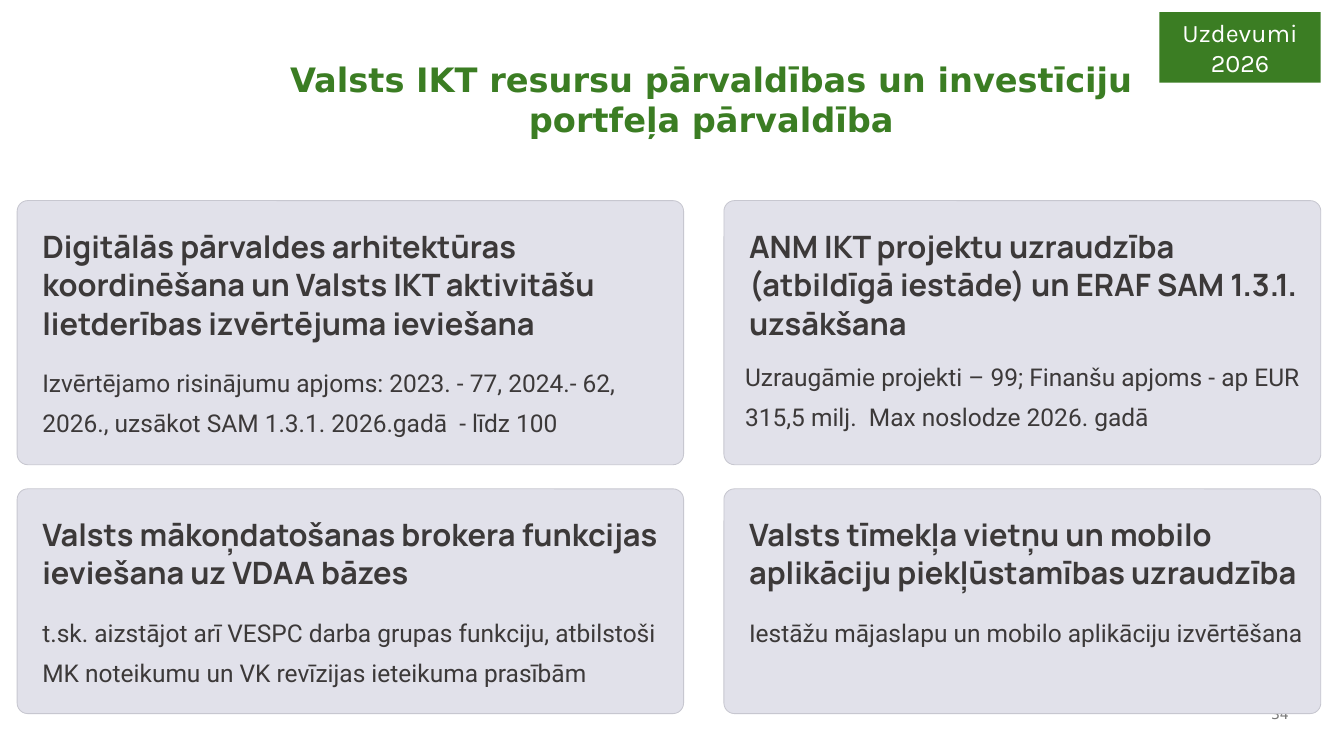
"""Build the slide on managing state ICT resources and investments."""
from pptx import Presentation
from pptx.dml.color import RGBColor
from pptx.enum.shapes import MSO_SHAPE
from pptx.enum.text import MSO_ANCHOR, PP_ALIGN
from pptx.util import Inches, Pt

RECT, ROUNDED = MSO_SHAPE.RECTANGLE, MSO_SHAPE.ROUNDED_RECTANGLE
TOP, MIDDLE = MSO_ANCHOR.TOP, MSO_ANCHOR.MIDDLE
LEFT, CENTER, RIGHT = PP_ALIGN.LEFT, PP_ALIGN.CENTER, PP_ALIGN.RIGHT

COLORS = {"green": "3B7D23", "card": "E1E1EA", "edge": "C7C7D0",
          "ink": "3C3939", "gray": "797979", "white": "FFFFFF"}
COLUMNS = [(0.17, 6.61, 6.13), (7.18, 5.92, 5.67)]
ROWS = [(1.99, 2.62, 3), (4.85, 2.23, 2)]
PAD, GAP, RADIUS = 0.25, 0.16, 0.105
HEADING_LEADING, BODY_LEADING = 27.5, 28.5
HEADING = {"font": "Manrope", "size": 22, "bold": True, "leading": HEADING_LEADING}
BODY = {"font": "Roboto", "size": 17.5, "leading": BODY_LEADING}

CARDS = [
    [("Digitālās pārvaldes arhitektūras koordinēšana un Valsts IKT aktivitāšu "
      "lietderības izvērtējuma ieviešana",
      "Izvērtējamo risinājumu apjoms: 2023. - 77, 2024.- 62, 2026., uzsākot "
      "SAM 1.3.1. 2026.gadā  - līdz 100", (0, 0)),
     ("ANM IKT projektu uzraudzība (atbildīgā iestāde) un ERAF SAM 1.3.1. uzsākšana",
      "Uzraugāmie projekti – 99; Finanšu apjoms - ap EUR 315,5 milj.  Max "
      "noslodze 2026. gadā", (-0.04, -0.06))],
    [("Valsts mākoņdatošanas brokera funkcijas ieviešana uz VDAA bāzes",
      "t.sk. aizstājot arī VESPC darba grupas funkciju, atbilstoši MK noteikumu "
      "un VK revīzijas ieteikuma prasībām", (0, 0)),
     ("Valsts tīmekļa vietņu un mobilo aplikāciju piekļūstamības uzraudzība",
      "Iestāžu mājaslapu un mobilo aplikāciju izvērtēšana", (0, 0))],
]


def rgb(name):
    """Return the named colour."""
    return RGBColor.from_string(COLORS[name])


def write(frame, text, font="DejaVu Sans", size=18, color="ink", bold=False,
          align=LEFT, anchor=TOP, leading=None, inset=None):
    """Fill a text frame with one paragraph per line of text."""
    frame.word_wrap = True
    frame.vertical_anchor = anchor
    if inset is not None:
        frame.margin_left = frame.margin_right = Inches(inset)
        frame.margin_top = frame.margin_bottom = Inches(inset)
    frame.text = text
    for paragraph in frame.paragraphs:
        paragraph.alignment = align
        if leading:
            paragraph.line_spacing = Pt(leading)
        for run in paragraph.runs:
            run.font.name = font
            run.font.size = Pt(size)
            run.font.bold = bold
            run.font.color.rgb = rgb(color)


def add_label(slide, box, text, **style):
    """Add a text box at the given left, top, width and height."""
    label = slide.shapes.add_textbox(*map(Inches, box))
    write(label.text_frame, text, **style)


def add_panel(slide, kind, box, fill, edge=None):
    """Add a filled shape with an optional thin outline."""
    panel = slide.shapes.add_shape(kind, *map(Inches, box))
    panel.shadow.inherit = False
    panel.fill.solid()
    panel.fill.fore_color.rgb = rgb(fill)
    if edge:
        panel.line.color.rgb = rgb(edge)
        panel.line.width = Pt(0.6)
    else:
        panel.line.fill.background()
    return panel


def add_card(slide, column, row, heading, body, nudge):
    """Add a rounded card with a heading and a body text."""
    left, width, body_width = column
    top, height, heading_lines = row
    card = add_panel(slide, ROUNDED, (left, top, width, height), "card", "edge")
    card.adjustments[0] = RADIUS / height
    text_left, text_top = left + PAD, top + PAD
    heading_height = heading_lines * HEADING_LEADING / 72
    add_label(slide, (text_left, text_top, width - PAD, heading_height),
              heading, inset=0, **HEADING)
    body_top = text_top + heading_height + GAP
    add_label(slide, (text_left + nudge[0], body_top + nudge[1],
                      body_width, 2 * BODY_LEADING / 72),
              body, inset=0, **BODY)


def set_title(slide, box, text):
    """Place and format the slide title."""
    title = slide.shapes.title
    title.left, title.top, title.width, title.height = map(Inches, box)
    write(title.text_frame, text, size=24, color="green", bold=True,
          align=CENTER, anchor=MIDDLE)


def main():
    """Build and save the presentation."""
    deck = Presentation()
    deck.slide_width, deck.slide_height = Inches(13.33), Inches(7.5)
    slide = deck.slides.add_slide(deck.slide_layouts[5])
    set_title(slide, (2.61, 0.42, 8.89, 1.13),
              "Valsts IKT resursu pārvaldības un investīciju portfeļa pārvaldība")
    add_label(slide, (12.44, 6.92, 0.44, 0.33), "34", size=10, color="gray",
              align=RIGHT, anchor=MIDDLE)
    badge = add_panel(slide, RECT, (11.5, 0.12, 1.6, 0.7), "green")
    write(badge.text_frame, "Uzdevumi\n2026", font="Karla", color="white",
          align=CENTER, anchor=MIDDLE)
    for row, cards in zip(ROWS, CARDS):
        for column, content in zip(COLUMNS, cards):
            add_card(slide, column, row, *content)
    deck.save("out.pptx")


if __name__ == "__main__":
    main()
